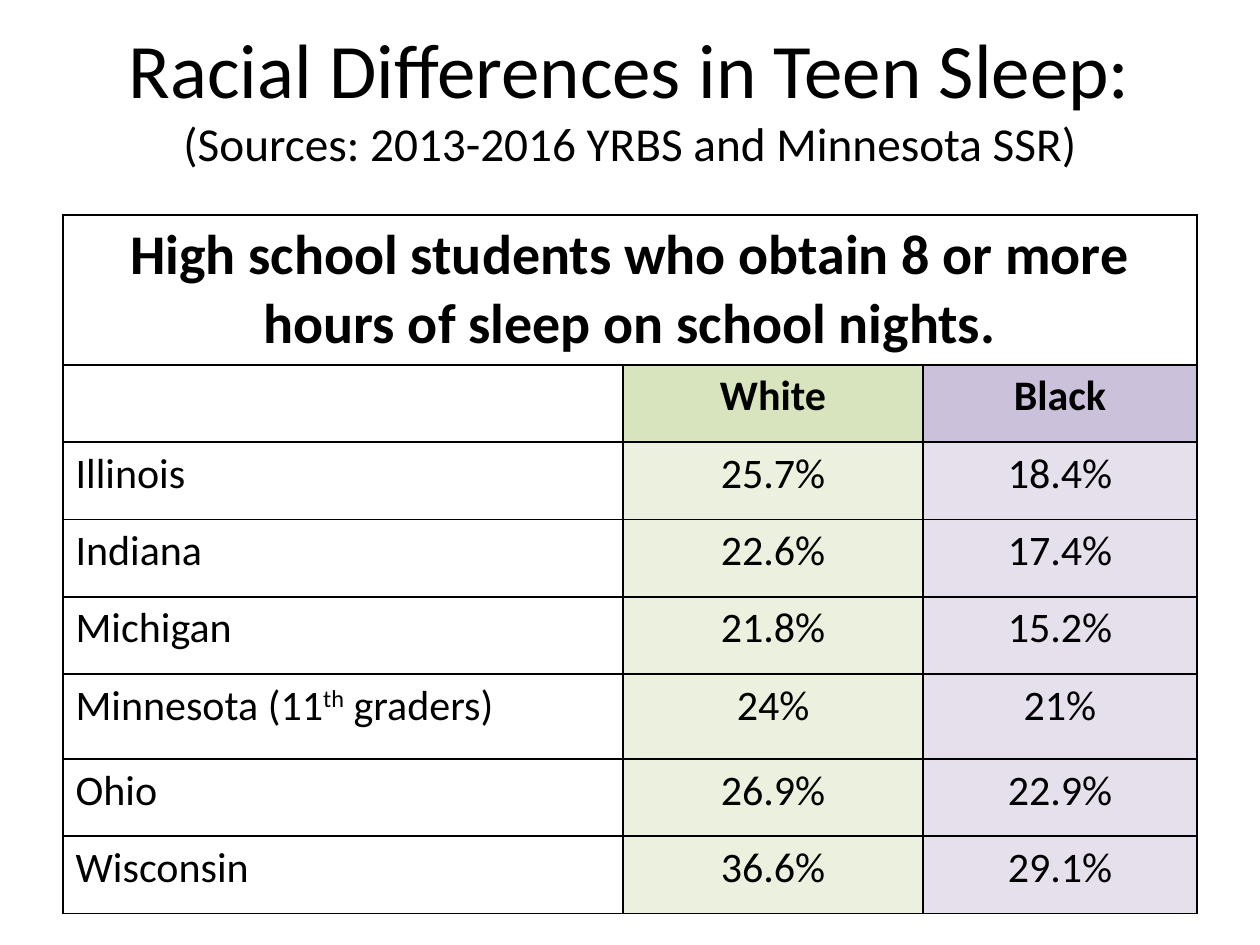
"""Build a slide with a table of teen sleep by state and race."""
from dataclasses import dataclass

from lxml.etree import SubElement
from pptx import Presentation
from pptx.dml.color import RGBColor
from pptx.enum.text import MSO_ANCHOR, MSO_AUTO_SIZE, PP_ALIGN
from pptx.oxml.ns import qn
from pptx.util import Pt


@dataclass(frozen=True)
class Theme:
    font: str = "Calibri"
    ink: str = "000000"
    head_fills: tuple = (None, "D7E4BD", "CCC1DA")
    body_fills: tuple = (None, "EBF1DE", "E6E0EC")
    title_size: int = 44
    source_size: int = 27
    heading_size: int = 32
    cell_size: int = 24


theme = Theme()


def write(para, text, size=theme.cell_size, bold=False, align=PP_ALIGN.LEFT, baseline=0):
    para.alignment = align
    span = para.add_run()
    span.text = text
    span.font.name = theme.font
    span.font.size = Pt(size)
    span.font.bold = bold
    span.font.color.rgb = RGBColor.from_string(theme.ink)
    if baseline:
        span.font._element.set("baseline", str(baseline * 1000))


def format_cell(cell, fill):
    properties = cell._tc.get_or_add_tcPr()
    for side in ("lnL", "lnR", "lnT", "lnB"):
        line = SubElement(properties, qn(f"a:{side}"), w=str(Pt(1)))
        SubElement(SubElement(line, qn("a:solidFill")), qn("a:srgbClr"), val=theme.ink)
    if fill:
        cell.fill.solid()
        cell.fill.fore_color.rgb = RGBColor.from_string(fill)
    else:
        cell.fill.background()


deck = Presentation()
deck.slide_width, deck.slide_height = Pt(720), Pt(540)
page = deck.slides.add_slide(deck.slide_layouts[5])

title = page.shapes.title
title.left, title.top, title.width, title.height = Pt(36), Pt(0), Pt(648), Pt(110)
title.text_frame.auto_size = MSO_AUTO_SIZE.NONE
title.text_frame.vertical_anchor = MSO_ANCHOR.MIDDLE
title_para = title.text_frame.paragraphs[0]
write(title_para, "Racial Differences in Teen Sleep:", size=theme.title_size, align=PP_ALIGN.CENTER)
title_para.add_line_break()
write(title_para, "(Sources: 2013-2016 YRBS and Minnesota SSR)", size=theme.source_size,
      align=PP_ALIGN.CENTER)

heading = "High school students who obtain 8 or more hours of sleep on school nights."
groups = ("", "White", "Black")
states = [
    ("Illinois", "25.7%", "18.4%"),
    ("Indiana", "22.6%", "17.4%"),
    ("Michigan", "21.8%", "15.2%"),
    (("Minnesota (11", "th", " graders)"), "24%", "21%"),
    ("Ohio", "26.9%", "22.9%"),
    ("Wisconsin", "36.6%", "29.1%"),
]
column_widths = (320, 171.5, 156.5)
row_heights = (85, 44.2, 44.2, 44.2, 44.2, 48.4, 44.2, 44.2)

table = page.shapes.add_table(len(row_heights), len(column_widths), Pt(36), Pt(123),
                              Pt(sum(column_widths)), Pt(sum(row_heights))).table
table.first_row = table.horz_banding = False
for column, width in zip(table.columns, column_widths):
    column.width = Pt(width)
for row, height in zip(table.rows, row_heights):
    row.height = Pt(height)

for cell in table.rows[0].cells:
    format_cell(cell, None)
table.cell(0, 0).merge(table.cell(0, 2))
write(table.cell(0, 0).text_frame.paragraphs[0], heading, size=theme.heading_size, bold=True,
      align=PP_ALIGN.CENTER)

for row_index, values in enumerate([groups, *states], start=1):
    is_head = row_index == 1
    fills = theme.head_fills if is_head else theme.body_fills
    for column_index, (value, fill) in enumerate(zip(values, fills)):
        cell = table.cell(row_index, column_index)
        format_cell(cell, fill)
        para = cell.text_frame.paragraphs[0]
        para.font.size = Pt(theme.cell_size)
        align = PP_ALIGN.CENTER if column_index else PP_ALIGN.LEFT
        parts = (value,) if isinstance(value, str) else value
        for part_index, part in enumerate(parts):
            if part:
                write(para, part, bold=is_head, align=align, baseline=30 * (part_index % 2))

deck.save("out.pptx")
